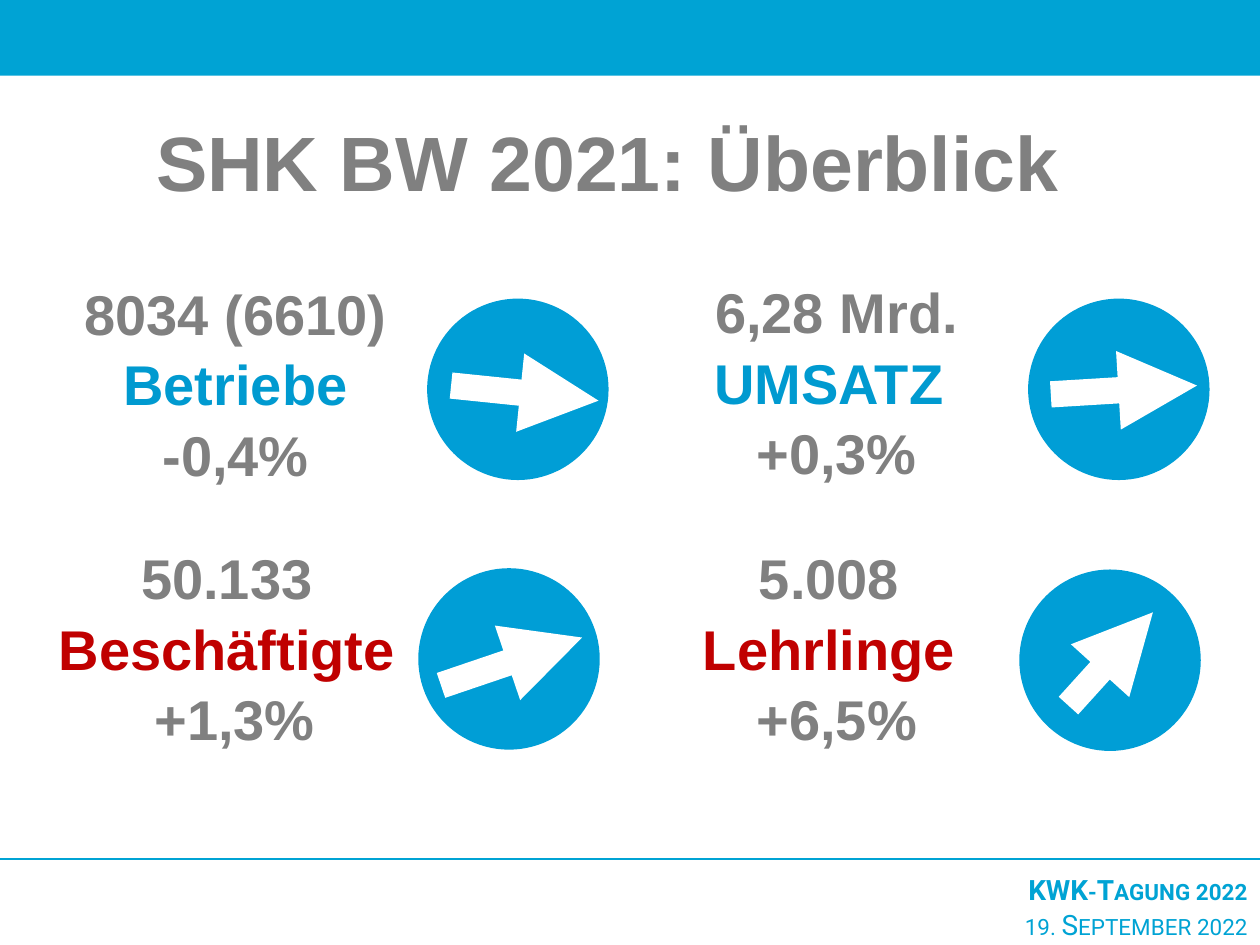
from typing import NamedTuple

from lxml.etree import SubElement
from pptx import Presentation
from pptx.dml.color import RGBColor
from pptx.enum.shapes import MSO_CONNECTOR, MSO_SHAPE
from pptx.enum.text import PP_ALIGN
from pptx.oxml.ns import qn
from pptx.util import Pt

PX = 9144
DISC = 144

CYAN = RGBColor(0x00, 0xA3, 0xD4)
BLUE = RGBColor(0x00, 0x9E, 0xD6)
AZURE = RGBColor(0x00, 0x9A, 0xD0)
RED = RGBColor(0xC0, 0x00, 0x00)
GRAY = RGBColor(0x80, 0x80, 0x80)
WHITE = RGBColor(0xFF, 0xFF, 0xFF)


class Box(NamedTuple):
    left: int
    top: int
    width: int
    height: int


class Line(NamedTuple):
    text: str
    color: RGBColor
    bold: bool = True


class Trend(NamedTuple):
    box: Box
    value: str
    label: str
    color: RGBColor
    change: str
    disc: tuple[int, int]
    start: tuple[int, int]
    end: tuple[int, int]


TRENDS = [
    Trend(Box(468, 213, 392, 172), "6,28 Mrd.", "UMSATZ ", AZURE, "+0,3%",
          (816, 237), (834, 313), (950, 306)),
    Trend(Box(-11, 424, 382, 172), "50.133", "Beschäftigte", RED, " +1,3%",
          (332, 451), (350, 544), (462, 506)),
    Trend(Box(-9, 214, 392, 172), "8034 (6610)", "Betriebe", AZURE, "-0,4%",
          (339, 237), (358, 306), (475, 318)),
    Trend(Box(467, 424, 382, 172), "5.008", "Lehrlinge", RED, " +6,5%",
          (809, 452), (848, 560), (915, 486)),
]


def scale(*sizes: int) -> list[int]:
    return [size * PX for size in sizes]


def write(slide, box: Box, lines: list[Line], size: int, face: str = "Arial",
          align: PP_ALIGN = PP_ALIGN.CENTER, caps: bool = False) -> None:
    frame = slide.shapes.add_textbox(*scale(*box)).text_frame
    frame.word_wrap = True
    for index, line in enumerate(lines):
        para = frame.paragraphs[0] if index == 0 else frame.add_paragraph()
        para.alignment = align
        para.line_spacing = 1.05
        run = para.add_run()
        run.text = line.text
        if caps:
            run._r.get_or_add_rPr().set("cap", "small")
        font = para.font
        font.name = face
        font.size = Pt(size)
        font.bold = line.bold
        font.color.rgb = line.color


def fill(slide, kind: MSO_SHAPE, box: Box, color: RGBColor) -> None:
    shape = slide.shapes.add_shape(kind, *scale(*box))
    shape.shadow.inherit = False
    shape.fill.solid()
    shape.fill.fore_color.rgb = color
    shape.line.fill.background()


def rule(slide, start: tuple[int, int], end: tuple[int, int],
         color: RGBColor, width: int, arrow: bool = False) -> None:
    link = slide.shapes.add_connector(
        MSO_CONNECTOR.STRAIGHT, *scale(*start, *end))
    link.line.color.rgb = color
    link.line.width = Pt(width)
    if arrow:
        SubElement(link.line._get_or_add_ln(), qn("a:tailEnd"), type="triangle")
    SubElement(link._element.spPr, qn("a:effectLst"))


def draw(slide, trend: Trend) -> None:
    lines = [Line(trend.value, GRAY), Line(trend.label, trend.color),
             Line(trend.change, GRAY)]
    write(slide, trend.box, lines, 32)
    fill(slide, MSO_SHAPE.OVAL, Box(*trend.disc, DISC, DISC), BLUE)
    rule(slide, trend.start, trend.end, WHITE, 15, arrow=True)


def main() -> None:
    deck = Presentation()
    deck.slide_width, deck.slide_height = scale(1000, 750)
    slide = deck.slides.add_slide(deck.slide_layouts[6])
    footer = [Line("KWK-Tagung 2022", CYAN),
              Line("19. September 2022", CYAN, False)]
    write(slide, Box(623, 686, 377, 64), footer, 16, "Roboto",
          PP_ALIGN.RIGHT, caps=True)
    fill(slide, MSO_SHAPE.RECTANGLE, Box(-1, 0, 1001, 60), CYAN)
    rule(slide, (0, 682), (1000, 682), CYAN, 1)
    write(slide, Box(12, 82, 958, 84),
          [Line("SHK BW 2021: Überblick ", GRAY)], 44)
    for trend in TRENDS:
        draw(slide, trend)
    deck.save("out.pptx")


if __name__ == "__main__":
    main()
